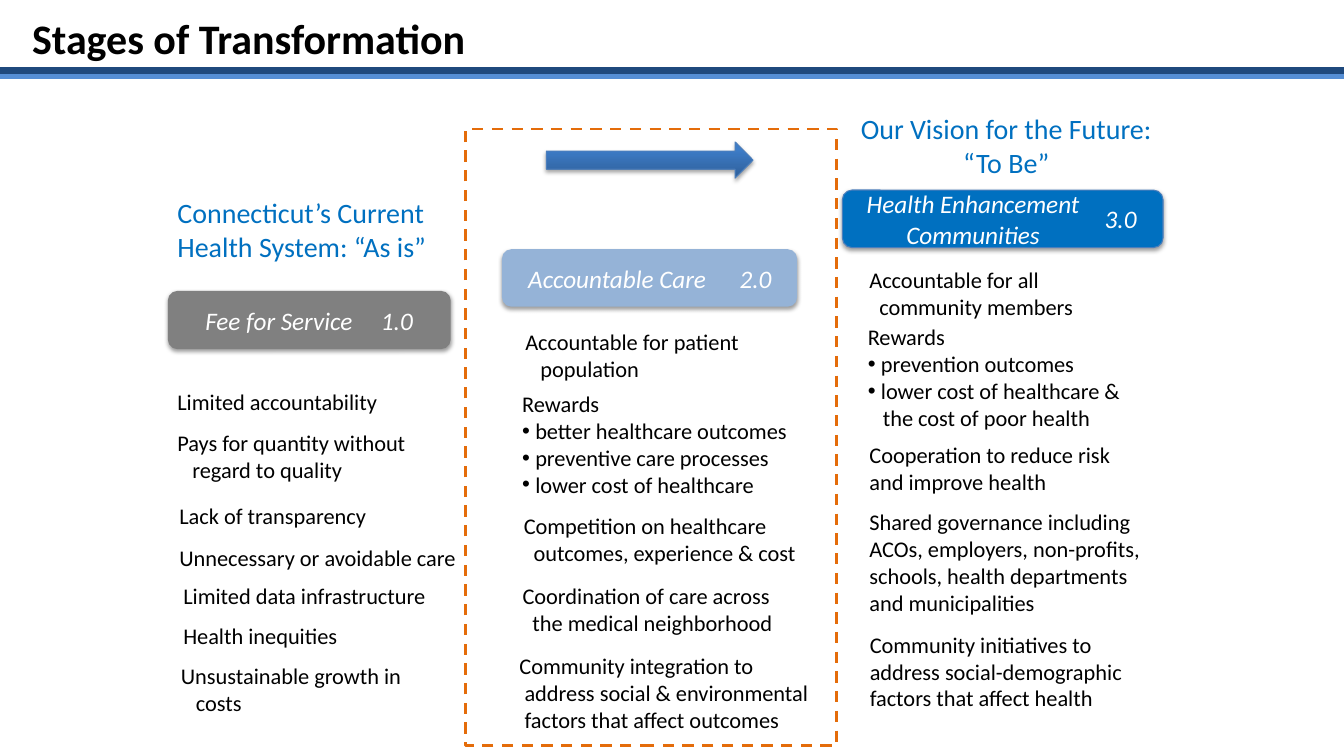
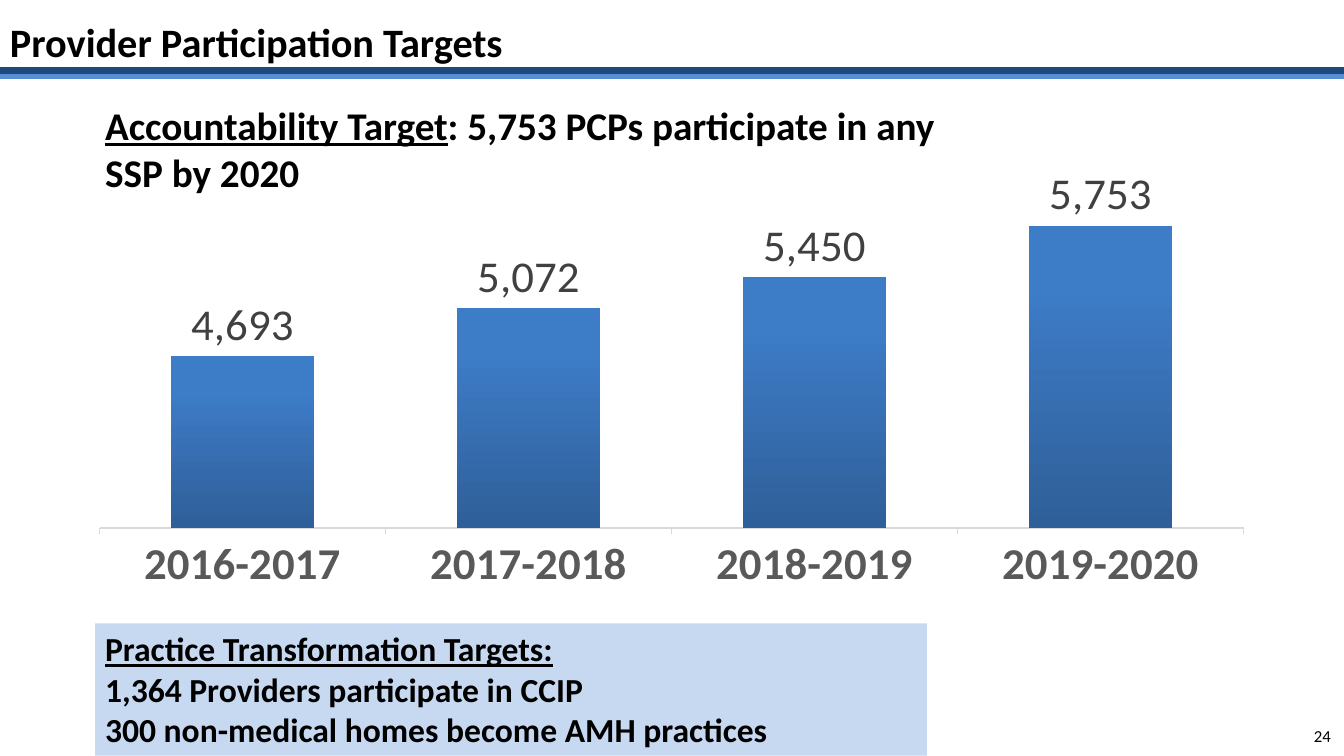
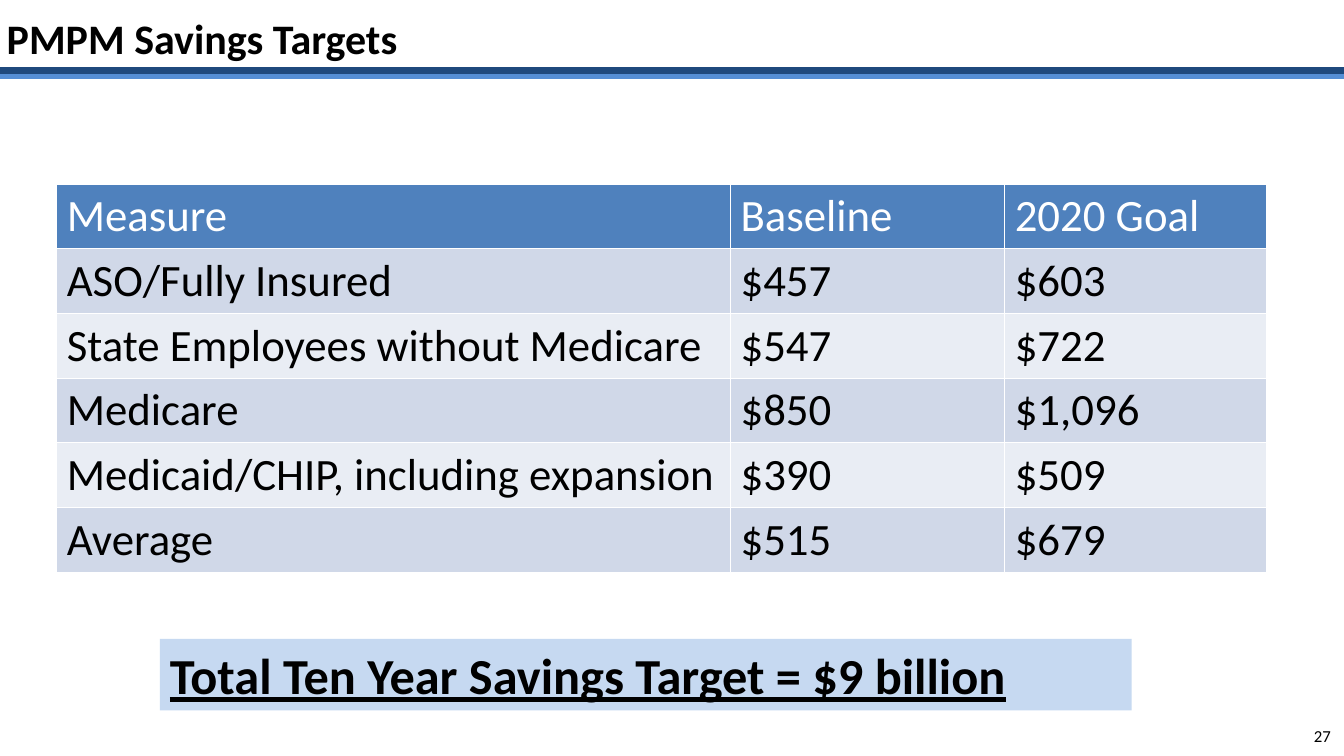
from collections import namedtuple

from lxml import etree
from pptx import Presentation
from pptx.chart.data import CategoryChartData
from pptx.dml.color import RGBColor
from pptx.enum.chart import XL_CHART_TYPE, XL_LABEL_POSITION, XL_TICK_MARK
from pptx.enum.dml import MSO_LINE
from pptx.enum.shapes import MSO_CONNECTOR, MSO_SHAPE
from pptx.enum.text import MSO_ANCHOR, PP_ALIGN
from pptx.oxml.ns import qn
from pptx.util import Cm, Pt

FONT = "Calibri"
WIDTH, HEIGHT = 33.87, 19.05
C = {
    "black": "000000", "white": "FFFFFF", "rule_light": "558ED5", "rule_dark": "1F497D",
    "heading": "0070C0", "current": "808080", "next": "95B3D7", "future": "0070C0",
    "frame": "E46C0A", "outline": "4B7EBC", "grad_low": "2F5F99", "grad_high": "3D7CC7",
    "callout": "C6D9F1", "axis_text": "595959", "axis_line": "D9D9D9", "label": "404040",
    "header": "4F81BD", "band_dark": "D0D8E8", "band_light": "E9EDF4",
}

# ---- Content: lengths in cm ----
Line = namedtuple("Line", "text indent bullet", defaults=(0, False))
Pill = namedtuple("Pill", "box fill label label_room version version_x outline")

HEADINGS = [
    ((4.22, 4.8, 8.48, 1.96), "Connecticut’s Current Health System: “As is”", PP_ALIGN.LEFT),
    ((21.12, 2.69, 8.48, 1.96), "Our Vision for the Future: “To Be”", PP_ALIGN.CENTER),
]
PILLS = [
    Pill((4.23, 7.33, 7.13, 1.47), "current", ["Fee for Service"], 1.78, "1.0", 9.35, False),
    Pill((12.65, 6.28, 7.44, 1.45), "next", ["Accountable Care"], 1.88, "2.0", 18.39, False),
    Pill((21.23, 4.79, 8.08, 1.45), "future", ["Health Enhancement", "Communities"], 1.74,
         "3.0", 27.59, True),
]
# Each column: width, then (left, top, lines) for every statement
COLUMNS = [
    (7.6, [
        (4.22, 9.66, [Line("Limited accountability")]),
        (4.22, 10.69, [Line("Pays for quantity without"), Line("regard to quality", 0.38)]),
        (4.27, 12.52, [Line("Lack of transparency")]),
        (4.27, 13.59, [Line("Unnecessary or avoidable care")]),
        (4.37, 14.55, [Line("Limited data infrastructure")]),
        (4.37, 15.55, [Line("Health inequities")]),
        (4.31, 16.56, [Line("Unsustainable growth in"), Line("costs", 0.38)]),
    ]),
    (8.38, [
        (12.99, 8.14, [Line("Accountable for patient"), Line("population", 0.38)]),
        (12.91, 9.71, [Line("Rewards"),
                       Line("better healthcare outcomes", 0.33, True),
                       Line("preventive care processes", 0.33, True),
                       Line("lower cost of healthcare", 0.33, True)]),
        (12.95, 12.78, [Line("Competition on healthcare"),
                        Line("outcomes, experience & cost", 0.25)]),
        (12.92, 14.55, [Line("Coordination of care across"),
                        Line("the medical neighborhood", 0.25)]),
        (12.84, 16.31, [Line("Community integration to"),
                        Line("address social & environmental", 0.13),
                        Line("factors that affect outcomes", 0.13)]),
    ]),
    (7.39, [
        (21.66, 6.58, [Line("Accountable for all"), Line("community members", 0.25)]),
        (21.62, 8.03, [Line("Rewards"),
                       Line("prevention outcomes", 0.33, True),
                       Line("lower cost of healthcare &", 0.33, True),
                       Line("the cost of poor health", 0.38)]),
        (21.66, 10.99, [Line("Cooperation to reduce risk and improve health")]),
        (21.66, 12.69, [Line("Shared governance including ACOs, employers, non-profits, "
                             "schools, health departments and municipalities")]),
        (21.67, 15.77, [Line("Community initiatives to address social-demographic "
                             "factors that affect health")]),
    ]),
]
PROVIDERS = [  # period, share of providers, label
    ("2016-2017", 0.5, "4,693"),
    ("2017-2018", 0.64, "5,072"),
    ("2018-2019", 0.73, "5,450"),
    ("2019-2020", 0.88, "5,753"),
]
PRACTICE_TARGETS = ["Practice Transformation Targets:",
                    "1,364 Providers participate in CCIP",
                    "300 non-medical homes become AMH practices"]
SAVINGS = [
    ("Measure", "Baseline", "2020 Goal"),
    ("ASO/Fully Insured", "$457", "$603"),
    ("State Employees without Medicare", "$547", "$722"),
    ("Medicare", "$850", "$1,096"),
    ("Medicaid/CHIP, including expansion", "$390", "$509"),
    ("Average", "$515", "$679"),
]
SAVINGS_COLS, SAVINGS_ROW = (16.98, 6.91, 6.6), 1.63


# ---- Helpers ----
def rgb(name):
    return RGBColor.from_string(C[name])


def cms(box):
    return [Cm(v) for v in box]


def style(font, size, color="black", bold=False, italic=False):
    font.name, font.size, font.bold, font.italic = FONT, Pt(size), bold, italic
    font.color.rgb = rgb(color)


def write(tf, lines, size, color="black", bold=False, italic=False, align=PP_ALIGN.LEFT):
    """Fill a text frame with one paragraph per line."""
    tf.word_wrap = True
    for i, line in enumerate(lines):
        p = tf.paragraphs[0] if i == 0 else tf.add_paragraph()
        p.text, p.alignment = line, align
        for r in p.runs:
            style(r.font, size, color, bold, italic)


def add_text(s, box, lines, size, anchor=MSO_ANCHOR.TOP, **look):
    tf = s.shapes.add_textbox(*cms(box)).text_frame
    tf.vertical_anchor = anchor
    write(tf, lines, size, **look)
    return tf


def add_box(s, kind, box, fill=None, line=None, width=0.75):
    sp = s.shapes.add_shape(kind, *cms(box))
    sp.shadow.inherit = False
    if fill:
        sp.fill.solid()
        sp.fill.fore_color.rgb = rgb(fill)
    else:
        sp.fill.background()
    if line:
        sp.line.color.rgb, sp.line.width = rgb(line), Pt(width)
    else:
        sp.line.fill.background()
    return sp


def add_callout(s, box, lines, size):
    tf = add_box(s, MSO_SHAPE.RECTANGLE, box, "callout").text_frame
    tf.vertical_anchor = MSO_ANCHOR.TOP
    write(tf, lines, size, bold=True)
    tf.paragraphs[0].runs[0].font.underline = True


def blue_gradient(fill):
    fill.gradient()
    fill.gradient_angle = 90
    for stop, position, color in zip(fill.gradient_stops, (0, 0.8), ("grad_low", "grad_high")):
        stop.position, stop.color.rgb = position, rgb(color)


def drop_shadow(sp, alpha):
    effects = sp.element.spPr.find(qn("a:effectLst"))
    shadow = etree.SubElement(effects, qn("a:outerShdw"), blurRad=str(Pt(3.1)),
                              dist=str(Pt(1.7)), dir="5400000", rotWithShape="0")
    color = etree.SubElement(shadow, qn("a:srgbClr"), val=C["black"])
    etree.SubElement(color, qn("a:alpha"), val=str(alpha * 1000))


def indent(p, line):
    pPr = p._p.get_or_add_pPr()
    pPr.set("marL", str(Cm(line.indent)))
    if line.bullet:
        pPr.set("indent", str(-Cm(line.indent)))
        etree.SubElement(pPr, qn("a:buFont"), typeface="Arial")
        etree.SubElement(pPr, qn("a:buChar"), char="•")


def cell_borders(cell, color):
    tcPr = cell._tc.get_or_add_tcPr()
    for i, side in enumerate(("a:lnL", "a:lnR", "a:lnT", "a:lnB")):
        ln = etree.Element(qn(side), w=str(Pt(1)))
        fill = etree.SubElement(ln, qn("a:solidFill"))
        etree.SubElement(fill, qn("a:srgbClr"), val=C[color])
        tcPr.insert(i, ln)


def new_slide(prs, title, box, size=30, number=None):
    """Slide with the double rule, the title and an optional page number."""
    s = prs.slides.add_slide(prs.slide_layouts[6])
    for y, color in ((1.91, "rule_light"), (1.78, "rule_dark")):
        rule = s.shapes.add_connector(MSO_CONNECTOR.STRAIGHT, *cms((0, y, WIDTH, y)))
        rule.line.color.rgb, rule.line.width = rgb(color), Pt(4.5)
        etree.SubElement(rule.element.spPr, qn("a:effectLst"))
    add_text(s, box, [title], size, MSO_ANCHOR.MIDDLE, bold=True)
    if number:
        add_text(s, (25.89, 18.03, 7.9, 1.02), [number], 12, MSO_ANCHOR.MIDDLE,
                 align=PP_ALIGN.RIGHT)
    return s


# ---- Slides ----
def stages_slide(prs):
    s = new_slide(prs, "Stages of Transformation", (0.56, 0, 22.48, 1.91))
    arrow = add_box(s, MSO_SHAPE.RIGHT_ARROW, (13.77, 3.58, 5.21, 0.91), line="outline")
    blue_gradient(arrow.fill)
    drop_shadow(arrow, 35)
    for pill in PILLS:
        left, top, width, height = pill.box
        sp = add_box(s, MSO_SHAPE.ROUNDED_RECTANGLE, pill.box, pill.fill,
                     "outline" if pill.outline else None)
        drop_shadow(sp, 38)
        tf = sp.text_frame
        tf.margin_right = Cm(pill.label_room)  # room for the version number
        tf.vertical_anchor = MSO_ANCHOR.MIDDLE
        write(tf, pill.label, 18, "white", italic=True, align=PP_ALIGN.CENTER)
        add_text(s, (pill.version_x, top, 1.52, height), [pill.version], 18,
                 MSO_ANCHOR.MIDDLE, color="white", italic=True)
    for width, blocks in COLUMNS:
        for left, top, lines in blocks:
            box = (left, top, width, 0.26 + 0.68 * len(lines))
            tf = add_text(s, box, [line.text for line in lines], 16)
            for p, line in zip(tf.paragraphs, lines):
                indent(p, line)
    frame = add_box(s, MSO_SHAPE.RECTANGLE, (11.73, 3.25, 9.36, 15.53), None, "frame", 2)
    frame.line.dash_style = MSO_LINE.DASH
    for box, text, align in HEADINGS:
        add_text(s, box, [text], 20, color="heading", align=align)


def participation_slide(prs):
    s = new_slide(prs, "Provider Participation Targets", (0, 0.38, 22.86, 1.32), 28.8, "24")
    data = CategoryChartData(number_format="0%")
    data.categories = [period for period, _, _ in PROVIDERS]
    data.add_series("Series 1", [share for _, share, _ in PROVIDERS])
    chart = s.shapes.add_chart(XL_CHART_TYPE.COLUMN_CLUSTERED,
                               *cms((1.91, 4.22, 30.03, 10.92)), data).chart
    chart.has_legend = chart.has_title = False
    style(chart.font, 32, bold=True)

    axis = chart.category_axis
    style(axis.tick_labels.font, 32, "axis_text", bold=True)
    axis.format.line.color.rgb, axis.format.line.width = rgb("axis_line"), Pt(0.75)
    axis.major_tick_mark = XL_TICK_MARK.OUTSIDE
    values = chart.value_axis
    values.visible = values.has_major_gridlines = False
    values.minimum_scale, values.maximum_scale = 0, 1
    values.tick_labels.number_format = "0%"
    values.tick_labels.number_format_is_linked = False

    plot = chart.plots[0]
    plot.gap_width, plot.overlap, plot.vary_by_categories = 100, -24, False
    series = plot.series[0]
    blue_gradient(series.format.fill)
    labels = series.data_labels
    style(labels.font, 32, "label", bold=True)
    labels.show_value, labels.position = True, XL_LABEL_POSITION.OUTSIDE_END
    labels.number_format, labels.number_format_is_linked = "0%", False
    for i, (_, _, text) in enumerate(PROVIDERS):
        label = series.points[i].data_label
        label.text_frame.text = text
        style(label.text_frame.paragraphs[0].runs[0].font, 32, "label")
        label.position = XL_LABEL_POSITION.OUTSIDE_END

    tf = add_text(s, (2.4, 2.43, 21.49, 2.64), ["Accountability Target"], 28, bold=True)
    p = tf.paragraphs[0]
    p.runs[0].font.underline = True
    r = p.add_run()
    r.text = ": 5,753 PCPs participate in any SSP by 2020"
    style(r.font, 28, bold=True)
    add_callout(s, (2.4, 15.71, 20.96, 3.33), PRACTICE_TARGETS, 24)


def savings_slide(prs):
    s = new_slide(prs, "PMPM Savings Targets", (-0.08, 0, 30.56, 1.91), number="27")
    rows = len(SAVINGS)
    box = (1.43, 4.64, sum(SAVINGS_COLS), SAVINGS_ROW * rows)
    table = s.shapes.add_table(rows, len(SAVINGS_COLS), *cms(box)).table
    for column, width in zip(table.columns, SAVINGS_COLS):
        column.width = Cm(width)
    for i, values in enumerate(SAVINGS):
        table.rows[i].height = Cm(SAVINGS_ROW)
        fill = "header" if i == 0 else ("band_light", "band_dark")[i % 2]
        for j, value in enumerate(values):
            cell = table.cell(i, j)
            write(cell.text_frame, [value], 32, "black" if i else "white")
            cell.fill.solid()
            cell.fill.fore_color.rgb = rgb(fill)
            cell_borders(cell, "white")
    add_callout(s, (4.03, 16.1, 24.49, 1.8), ["Total Ten Year Savings Target = $9 billion"], 36)


def main():
    prs = Presentation()
    prs.slide_width, prs.slide_height = Cm(WIDTH), Cm(HEIGHT)
    stages_slide(prs)
    participation_slide(prs)
    savings_slide(prs)
    prs.save("out.pptx")


if __name__ == "__main__":
    main()
